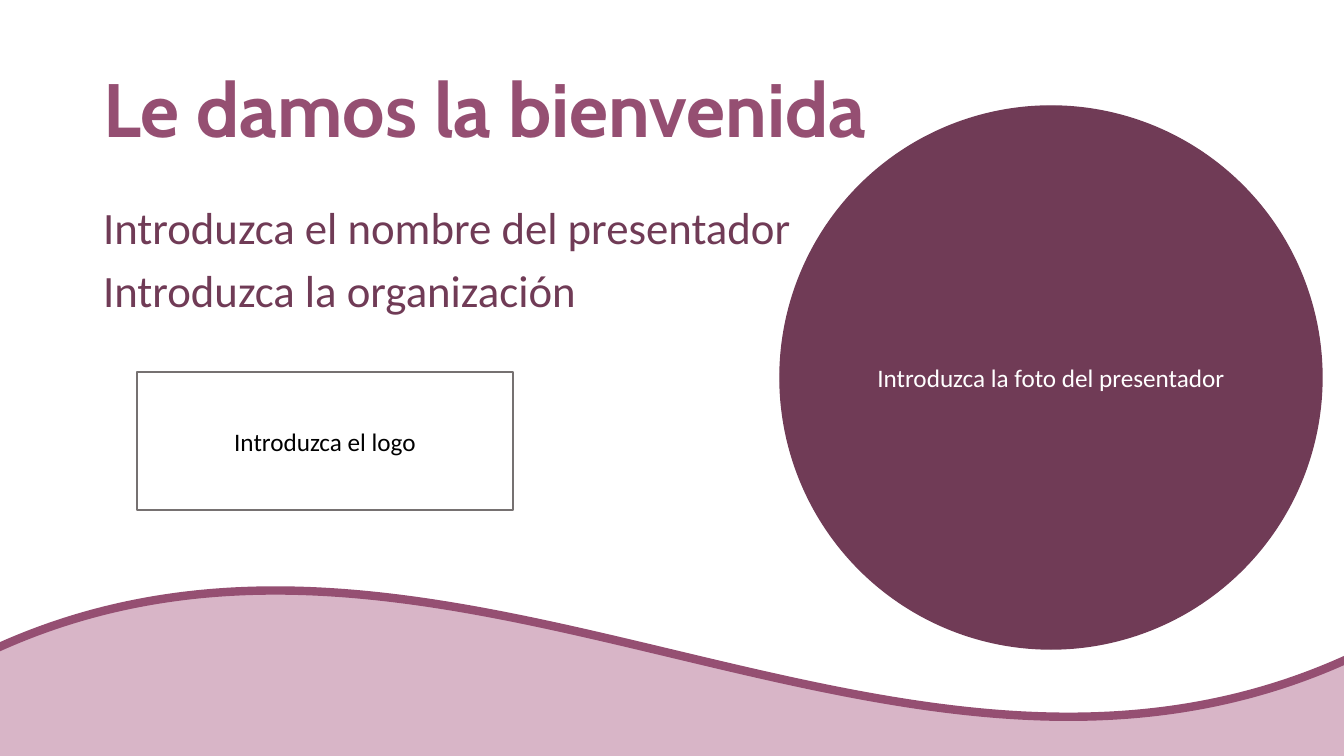
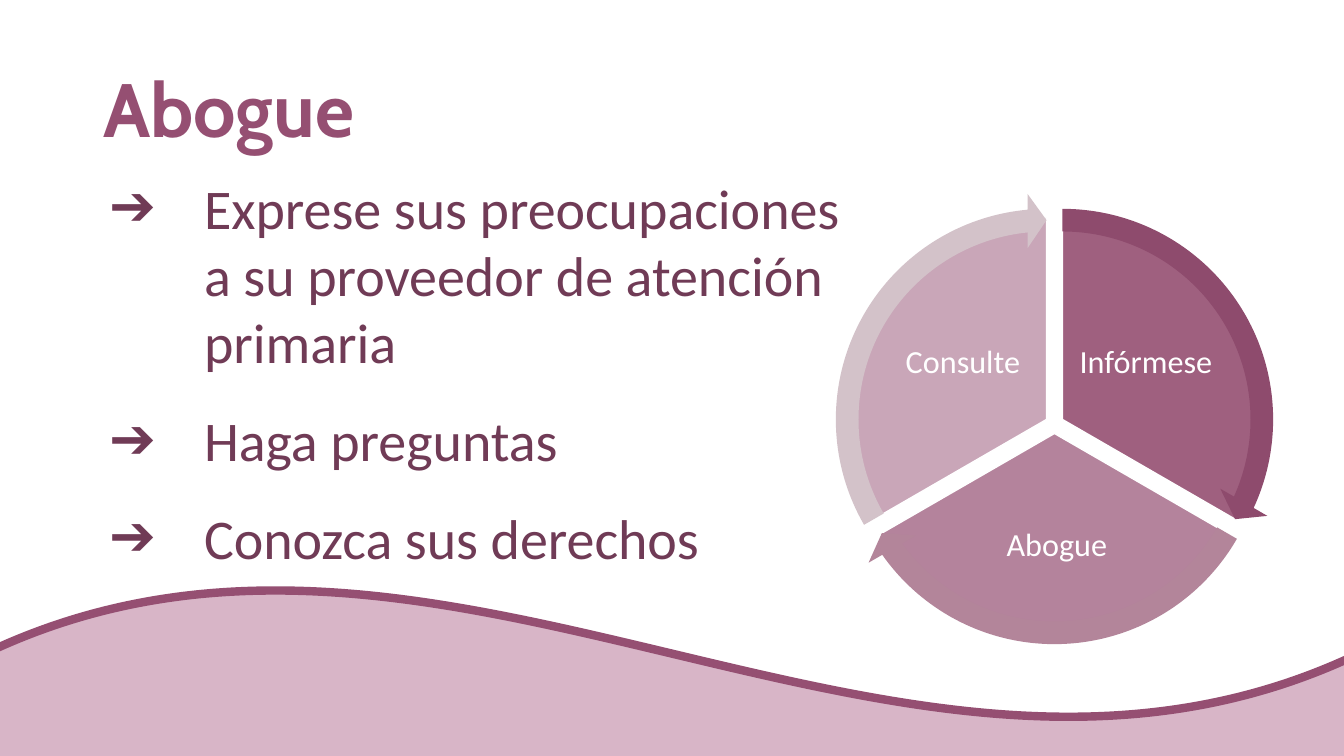
from lxml import etree
from pptx import Presentation
from pptx import util as u
from pptx.dml import color
from pptx.enum import shapes, text
from pptx.oxml import ns

SCALE = 914400 / 100.8  # EMU per px
PLUM, DARK, PINK, WHITE = "954F72", "703B56", "D8B5C7", "FFFFFF"
GREY, BLACK = "767171", "000000"
KIND, ALIGN = shapes.MSO_SHAPE, text.PP_ALIGN
MIDDLE, TOP = text.MSO_ANCHOR.MIDDLE, text.MSO_ANCHOR.TOP


def px(*lengths):
    return [u.Emu(round(length * SCALE)) for length in lengths]


def rgb(value):
    return color.RGBColor.from_string(value)


def child(parent, tag, **attributes):
    return etree.SubElement(parent, ns.qn(tag), attributes)


def set_bullet(paragraph, mark, ink):
    """Use the given bullet with a hanging indent, or none at all."""
    properties = paragraph._p.get_or_add_pPr()
    left, hang = px(101, -95) if mark else (0, 0)
    properties.set("marL", str(left))
    properties.set("indent", str(hang))
    if mark:
        child(child(properties, "a:buClr"), "a:srgbClr", val=ink)
        child(properties, "a:buFont", typeface="Calibri")
        child(properties, "a:buChar", char=mark)
    else:
        child(properties, "a:buNone")


def write(frame, lines, size=18, font="Calibri", ink=DARK, bold=False, align=ALIGN.LEFT,
          anchor=MIDDLE, spacing=1.0, before=0, after=0, bullet=None, inset=None):
    frame.word_wrap = True
    frame.auto_size = text.MSO_AUTO_SIZE.NONE
    frame.vertical_anchor = anchor
    if inset is not None:
        (frame.margin_left, frame.margin_top,
         frame.margin_right, frame.margin_bottom) = px(*[inset] * 4)
    for index, line in enumerate(lines):
        paragraph = frame.add_paragraph() if index else frame.paragraphs[0]
        set_bullet(paragraph, bullet, ink)
        paragraph.alignment = align
        paragraph.line_spacing = spacing
        paragraph.space_before = u.Pt(before if index else 0)
        paragraph.space_after = u.Pt(after)
        run = paragraph.add_run()
        run.text = line
        run.font.size, run.font.name, run.font.bold = u.Pt(size), font, bold
        run.font.color.rgb = rgb(ink)


class Deck:
    """Holds the shared style and the slide being filled."""

    def __init__(self):
        self.file = Presentation()
        self.file.slide_width, self.file.slide_height = px(1344, 756)
        self.layout = self.file.slide_layouts[1]
        self.slide = self.canvas = None

    def start(self, title):
        self.slide = self.file.slides.add_slide(self.layout)
        self.canvas = self.slide.shapes
        heading = self.canvas.title
        self.place(heading, 93, 40, 1159, 146)
        write(heading.text_frame, [title], size=54, font="Cabin", ink=PLUM, bold=True, spacing=0.9)

    def place(self, shape, *box):
        shape.left, shape.top, shape.width, shape.height = px(*box)

    def body(self, box, lines, **style):
        content = self.slide.placeholders[1]
        self.place(content, *box)
        write(content.text_frame, lines, anchor=TOP, before=10, **style)

    def shape(self, kind, box, fill, line=None, weight=1, alpha=None, adjust=()):
        shape = self.canvas.add_shape(kind, *px(*box))
        shape.shadow.inherit = False
        for index, value in enumerate(adjust):
            shape.adjustments[index] = value
        shape.fill.solid()
        shape.fill.fore_color.rgb = rgb(fill)
        if alpha:
            tint = shape.element.spPr.find(ns.qn("a:solidFill"))[0]
            child(tint, "a:alpha", val=str(alpha * 1000))
        if line:
            shape.line.color.rgb = rgb(line)
            shape.line.width = u.Pt(weight)
        else:
            shape.line.fill.background()
        return shape

    def label(self, box, words, **style):
        write(self.canvas.add_textbox(*px(*box)).text_frame, [words],
              align=ALIGN.CENTER, **style)

    def layout_wave(self):
        """Place the wave on the layout, behind everything else."""
        wave = self.shape(KIND.WAVE, (-15, 588, 1374, 525), PINK, PLUM, 6)
        self.layout.shapes.element.insert(2, wave.element)

    def cycle(self, sectors):
        """Draw 120-degree sectors, their labels and the arrows around them."""
        turn = 0.6  # adjustment units per degree
        self.canvas = self.slide.shapes.add_group_shape().shapes
        for words, (left, top), start, alpha, _, label_box in sectors:
            end = (start + 120) % 360
            self.shape(KIND.PIE, (left, top, 403, 403), PLUM, WHITE,
                       alpha=alpha, adjust=(start * turn, end * turn))
            self.label(label_box, words, size=23, ink=WHITE, spacing=0.9, inset=3)
        for _, (left, top), start, _, arrow_fill, _ in sectors:
            tip = (start + 120) % 360 - 5.46
            self.shape(KIND.CIRCULAR_ARROW, (left - 25, top - 25, 453, 453), arrow_fill,
                       adjust=(0.05, 3.28, tip * turn, start * turn, 0.06))


def main():
    deck = Deck()

    # Welcome
    deck.start("Le damos la bienvenida")
    deck.layout_wave()
    deck.body((93, 201, 1159, 480),
              ["Introduzca el nombre del presentador", "Introduzca la organización"],
              size=32, spacing=0.9)
    photo = deck.shape(KIND.OVAL, (780, 106, 542, 543), DARK, DARK)
    write(photo.text_frame, ["Introduzca la foto del presentador"],
          ink=WHITE, align=ALIGN.CENTER)
    logo = deck.shape(KIND.RECTANGLE, (137, 372, 376, 138), WHITE, GREY)
    write(logo.text_frame, ["Introduzca el logo"], ink=BLACK, align=ALIGN.CENTER)

    # Advocate
    deck.start("Abogue")
    deck.body((93, 168, 761, 498),
              ["Exprese sus preocupaciones a su proveedor de atención primaria",
               "Haga preguntas", "Conozca sus derechos"],
              size=40, after=12, bullet="➔")
    # Words, sector corner, start angle, opacity, arrow colour, label box
    deck.cycle([
        ("Infórmese", (861, 218), 270, 90, "8E4B6D", (1074, 303, 144, 120)),
        ("Abogue", (853, 232), 30, 70, "B3859A", (949, 493, 216, 106)),
        ("Consulte", (845, 218), 150, 50, "D3C2C9", (891, 303, 144, 120)),
    ])

    deck.file.save("out.pptx")


if __name__ == "__main__":
    main()
